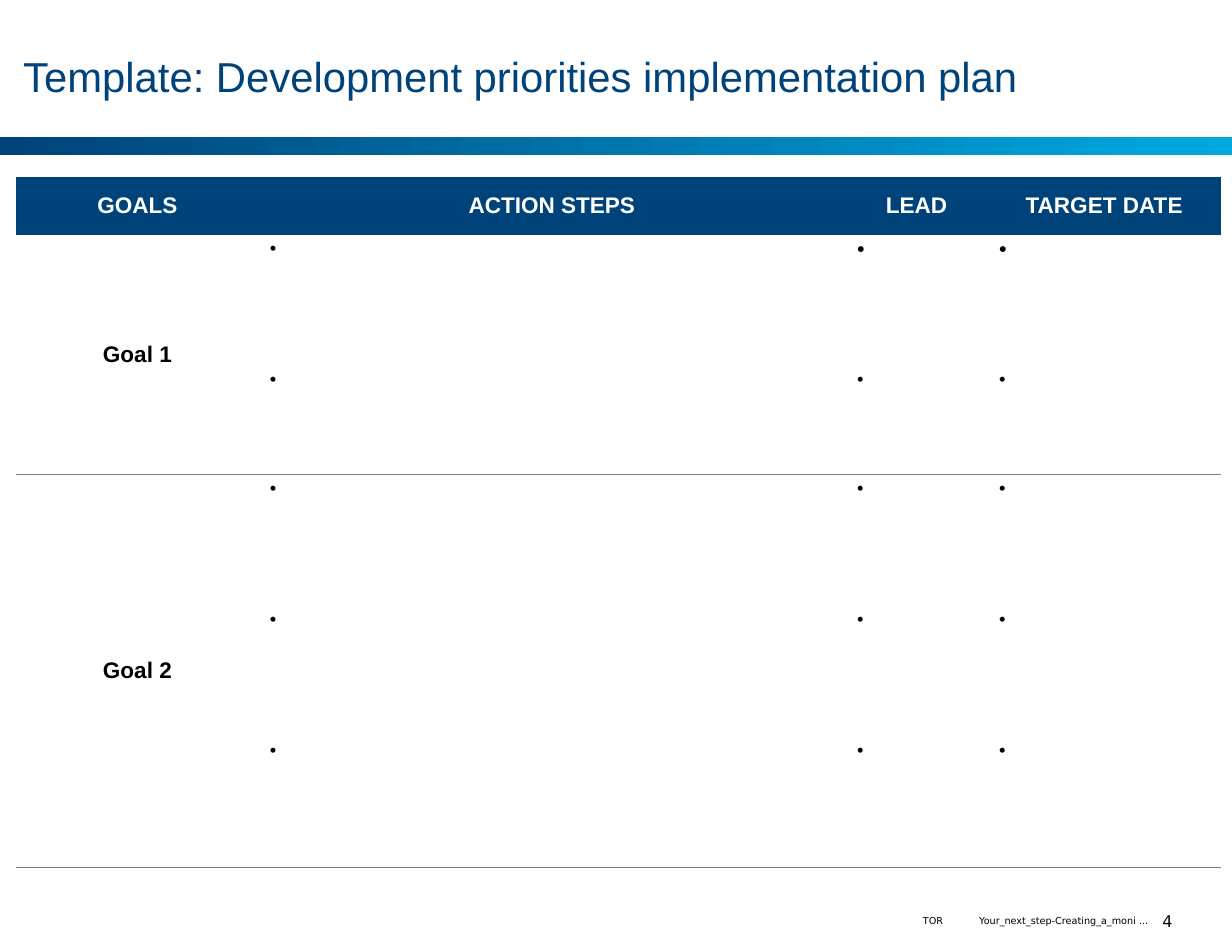
import pptx
import pptx.util
import pptx.dml.color
import pptx.enum.shapes
import pptx.enum.text
import pptx.oxml.ns
import lxml.etree

Cm, Pt = pptx.util.Cm, pptx.util.Pt
ALIGN = pptx.enum.text.PP_ALIGN
ANCHOR = pptx.enum.text.MSO_ANCHOR
COLOR = {"navy": "00437A", "sky": "00A9E0", "gray": "808080",
         "white": "FFFFFF", "black": "000000", "ink": "080808"}
HEADS = ["GOALS", "ACTION STEPS", "LEAD", "TARGET DATE"]
GOALS = {"Goal 1": 2, "Goal 2": 3}  # action rows for each goal
COLS = [5.31, 12.88, 3.12, 5.11]
ROWS = [1.24, 2.87, 2.41, 2.87, 2.87, 2.87]


def rgb(name):
    return pptx.dml.color.RGBColor.from_string(COLOR[name])


def write(frame, text, size=14, color="black", bold=False, font="Arial",
          align=ALIGN.LEFT, bullet=False):
    para = frame.paragraphs[0]
    para.alignment = align
    if bullet:
        props = para._p.get_or_add_pPr()
        props.set("marL", str(Cm(0.5)))
        props.set("indent", str(Cm(-0.5)))
        mark = lxml.etree.SubElement(props, pptx.oxml.ns.qn("a:buChar"))
        mark.set("char", "•")
    run = para.add_run()
    run.text = text
    run.font.size = Pt(size)
    run.font.name = font
    run.font.bold = bold
    run.font.color.rgb = rgb(color)


def inset(frame, left=0, right=0):
    frame.margin_left, frame.margin_right = Cm(left), Cm(right)
    frame.margin_top = frame.margin_bottom = 0
    frame.vertical_anchor = ANCHOR.MIDDLE


def border(cell, top=None, bottom=None):
    """Draw the named edges and clear the others; call before the fill."""
    qn = pptx.oxml.ns.qn
    props = cell._tc.get_or_add_tcPr()
    for side, color in zip("LRTB", (None, None, top, bottom)):
        line = lxml.etree.SubElement(props, qn("a:ln" + side))
        if color:
            line.set("w", str(Pt(1)))
            fill = lxml.etree.SubElement(line, qn("a:solidFill"))
            lxml.etree.SubElement(fill, qn("a:srgbClr")).set("val", COLOR[color])
        else:
            line.set("w", "0")
            lxml.etree.SubElement(line, qn("a:noFill"))


def header(slide, left, top, width, height):
    title = slide.shapes.title
    title.left, title.top = left + Cm(0.51), top
    title.width, title.height = width - Cm(0.95), height - Cm(0.48)
    frame = title.text_frame
    frame.auto_size = pptx.enum.text.MSO_AUTO_SIZE.NONE
    inset(frame, right=0.2)
    write(frame, "Template: Development priorities implementation plan",
          size=26, color="navy")

    band = slide.shapes.add_shape(
        pptx.enum.shapes.MSO_SHAPE.RECTANGLE,
        left, top + height - Cm(0.41), width, Cm(0.41))
    band.shadow.inherit = False
    band.line.fill.background()
    band.fill.gradient()
    band.fill.gradient_angle = 0
    for stop, name in zip(band.fill.gradient_stops, ("navy", "sky")):
        stop.color.rgb = rgb(name)


def plan(slide, left, top, width, height):
    table = slide.shapes.add_table(
        len(ROWS), len(COLS), left, top, width, height).table
    table.horz_banding = False
    for col, size in zip(table.columns, COLS):
        col.width = Cm(size)
    for row, size in zip(table.rows, ROWS):
        row.height = Cm(size)

    for col, text in enumerate(HEADS):
        cell = table.cell(0, col)
        border(cell, bottom="navy")
        cell.fill.solid()
        cell.fill.fore_color.rgb = rgb("navy")
        cell.vertical_anchor = ANCHOR.MIDDLE
        write(cell.text_frame, text, color="white", bold=True, align=ALIGN.CENTER)

    first = 1
    for goal, count in GOALS.items():
        last = first + count - 1
        name = table.cell(first, 0)
        name.merge(table.cell(last, 0))
        name.vertical_anchor = ANCHOR.MIDDLE
        write(name.text_frame, goal, bold=True, align=ALIGN.CENTER)
        for row in range(first, last + 1):
            for col in range(len(COLS)):
                cell = table.cell(row, col)
                upper = "navy" if first == 1 else "gray"
                ends = row == last or cell.is_merge_origin
                border(cell, top=upper if row == first else None,
                       bottom="gray" if ends else None)
                cell.fill.background()
                if col:
                    size = 14 if row == 1 and col > 1 else 12
                    write(cell.text_frame, " ", size=size, bullet=True)
        first = last + 1


def footer(slide, left, top, height):
    parts = [("TOR", 0, 0.58, 6, ALIGN.LEFT, "black", 0.13),
             ("Your_next_step-Creating_a_moni ...", 1.01, 4.06, 6,
              ALIGN.RIGHT, "black", 0.13),
             ("4", 5.05, 0.89, 10, ALIGN.CENTER, "ink", 0)]
    for text, shift, width, size, align, color, pad in parts:
        box = slide.shapes.add_textbox(left + Cm(shift), top, Cm(width), height)
        box.text_frame.word_wrap = False
        inset(box.text_frame, left=pad)
        write(box.text_frame, text, size=size, color=color,
              font="DejaVu Sans", align=align)


def main():
    deck = pptx.Presentation()
    deck.slide_width, deck.slide_height = Cm(27.03), Cm(20.68)
    slide = deck.slides.add_slide(deck.slide_layouts[5])
    header(slide, 0, Cm(0.41), deck.slide_width, Cm(3))
    plan(slide, Cm(0.36), Cm(3.89), Cm(sum(COLS)), Cm(sum(ROWS)))
    footer(slide, Cm(20.12), Cm(20.07), Cm(0.25))
    deck.save("out.pptx")


if __name__ == "__main__":
    main()
